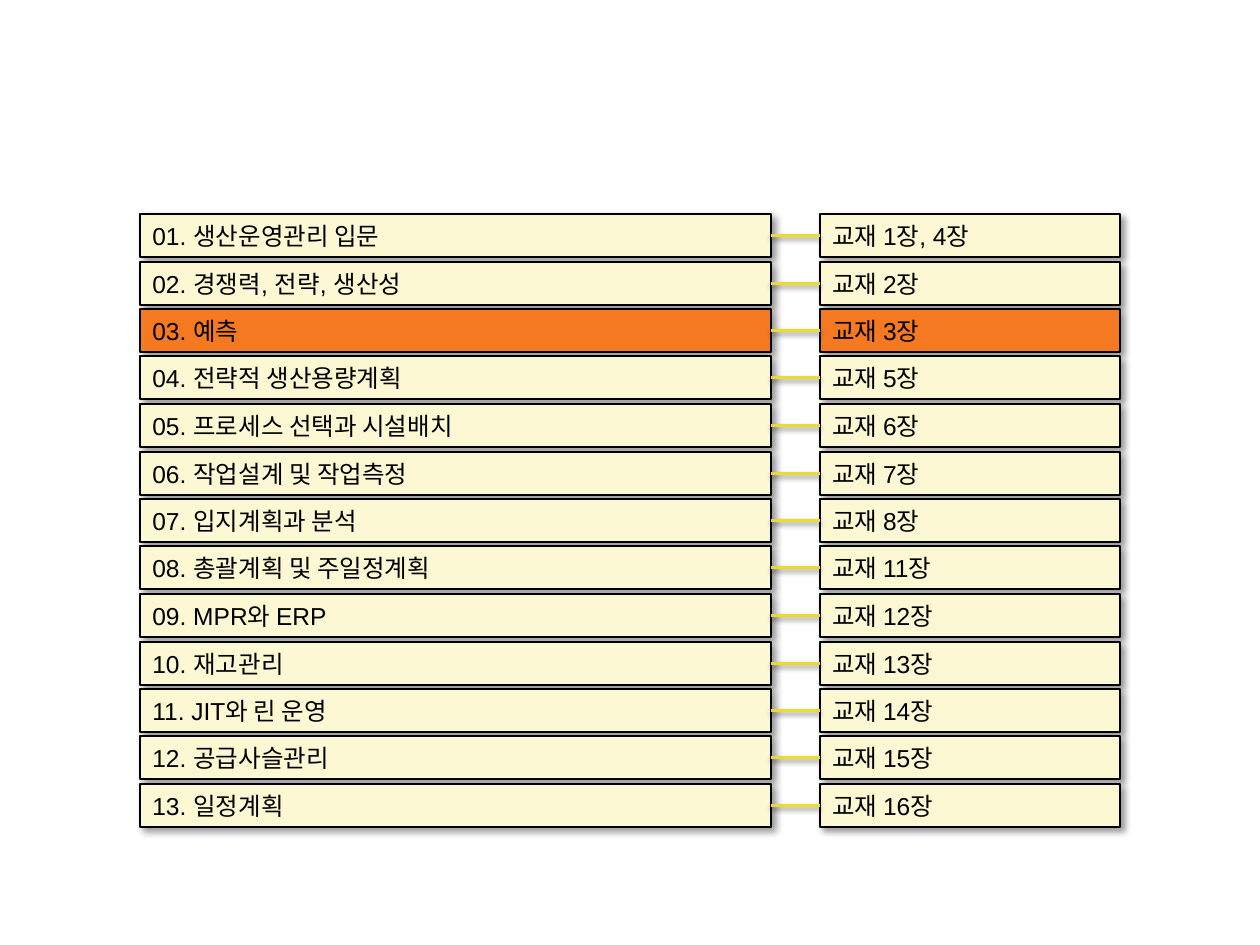
from lxml.etree import SubElement
from pptx import Presentation
from pptx.dml.color import RGBColor
from pptx.enum.shapes import MSO_CONNECTOR, MSO_SHAPE
from pptx.enum.text import MSO_ANCHOR, MSO_AUTO_SIZE, PP_ALIGN
from pptx.oxml.ns import qn
from pptx.util import Emu, Pt

PX_PER_INCH = 126
SLIDE_WIDTH, SLIDE_HEIGHT = 1260, 945
TOPIC_LEFT, TOPIC_WIDTH = 140, 631
CHAPTER_LEFT, CHAPTER_WIDTH = 820, 300
FIRST_TOP, LAST_TOP, ROW_HEIGHT = 214, 784, 43

CREAM = RGBColor(0xFC, 0xF8, 0xD4)
ORANGE = RGBColor(0xF4, 0x79, 0x21)
YELLOW = RGBColor(0xEE, 0xDB, 0x28)
BLACK = RGBColor(0x00, 0x00, 0x00)

CURRENT_TOPIC = "03. 예측"
SCHEDULE = [
    ("01. 생산운영관리 입문", "교재 1장, 4장"),
    ("02. 경쟁력, 전략, 생산성", "교재 2장"),
    (CURRENT_TOPIC, "교재 3장"),
    ("04. 전략적 생산용량계획", "교재 5장"),
    ("05. 프로세스 선택과 시설배치", "교재 6장"),
    ("06. 작업설계 및 작업측정", "교재 7장"),
    ("07. 입지계획과 분석", "교재 8장"),
    ("08. 총괄계획 및 주일정계획", "교재 11장"),
    ("09. MPR와 ERP", "교재 12장"),
    ("10. 재고관리", "교재 13장"),
    ("11. JIT와 린 운영", "교재 14장"),
    ("12. 공급사슬관리", "교재 15장"),
    ("13. 일정계획", "교재 16장"),
]


def px(length):
    """Turn pixels into EMU."""
    return Emu(round(length * 914400 / PX_PER_INCH))


def add_shadow(element, opacity, blur, distance, angle):
    """Give a shape or connector a black outer shadow, in percent, points and degrees."""
    properties = element._element.spPr
    for old_effects in properties.findall(qn("a:effectLst")):
        properties.remove(old_effects)
    effects = SubElement(properties, qn("a:effectLst"))
    shadow = SubElement(
        effects, qn("a:outerShdw"), blurRad=str(Pt(blur)), dist=str(Pt(distance)),
        dir=str(angle * 60000), algn="ctr", rotWithShape="0")
    color = SubElement(shadow, qn("a:srgbClr"), val=str(BLACK))
    SubElement(color, qn("a:alpha"), val=str(opacity * 1000))


def write_text(frame, text, *, size=14, font="Arial", color=BLACK, align=PP_ALIGN.LEFT):
    """Write one formatted paragraph into a text frame."""
    frame.word_wrap = True
    frame.auto_size = MSO_AUTO_SIZE.SHAPE_TO_FIT_TEXT
    frame.vertical_anchor = MSO_ANCHOR.MIDDLE
    paragraph = frame.paragraphs[0]
    paragraph.alignment = align
    run = paragraph.add_run()
    run.text = text
    run.font.size = Pt(size)
    run.font.name = font
    run.font.color.rgb = color


def add_bar(slide, left, top, width, text, fill):
    """Add a bordered bar with its text and shadow."""
    bar = slide.shapes.add_shape(
        MSO_SHAPE.RECTANGLE, px(left), px(top), px(width), px(ROW_HEIGHT))
    bar.shadow.inherit = False
    bar.fill.solid()
    bar.fill.fore_color.rgb = fill
    bar.line.color.rgb = BLACK
    bar.line.width = Pt(0.75)
    add_shadow(bar, opacity=40, blur=4, distance=3, angle=45)
    write_text(bar.text_frame, text)
    return bar


def add_link(slide, topic, chapter):
    """Join a topic bar to its chapter bar."""
    link = slide.shapes.add_connector(MSO_CONNECTOR.STRAIGHT, 0, 0, 0, 0)
    link.begin_connect(topic, 3)
    link.end_connect(chapter, 1)
    link.line.color.rgb = YELLOW
    link.line.width = Pt(2)
    add_shadow(link, opacity=38, blur=3.1, distance=1.6, angle=90)


def main():
    """Build the course schedule slide."""
    presentation = Presentation()
    presentation.slide_width = px(SLIDE_WIDTH)
    presentation.slide_height = px(SLIDE_HEIGHT)
    slide = presentation.slides.add_slide(presentation.slide_layouts[6])

    pitch = (LAST_TOP - FIRST_TOP) / (len(SCHEDULE) - 1)
    rows = [(FIRST_TOP + round(index * pitch), topic, chapter)
            for index, (topic, chapter) in enumerate(SCHEDULE)]
    fills = [ORANGE if topic == CURRENT_TOPIC else CREAM for topic, _ in SCHEDULE]
    topics = [add_bar(slide, TOPIC_LEFT, top, TOPIC_WIDTH, topic, fill)
              for (top, topic, _), fill in zip(rows, fills)]
    chapters = [add_bar(slide, CHAPTER_LEFT, top, CHAPTER_WIDTH, chapter, fill)
                for (top, _, chapter), fill in zip(rows, fills)]
    for topic, chapter in zip(topics, chapters):
        add_link(slide, topic, chapter)

    presentation.save("out.pptx")


if __name__ == "__main__":
    main()
